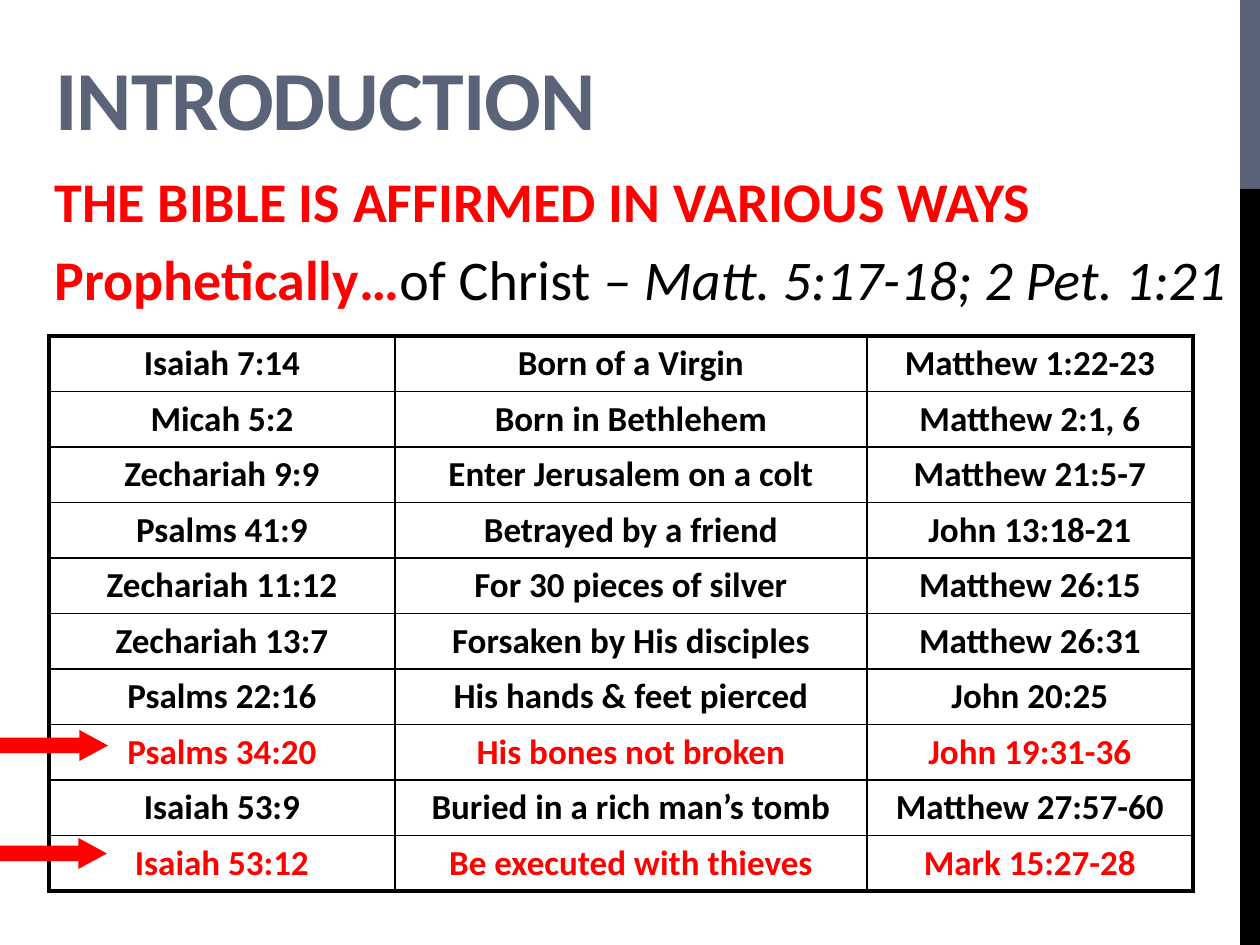
"""Build the Introduction slide on prophecies of Christ and their fulfilment."""
import dataclasses

import lxml.etree
import pptx
import pptx.dml.color
import pptx.enum.shapes
import pptx.enum.text
import pptx.oxml.ns
import pptx.util


@dataclasses.dataclass(frozen=True)
class Theme:
    font: str = "Calibri"
    slate: str = "5A6378"
    black: str = "000000"
    red: str = "FF0000"
    title_size: int = 48
    body_size: int = 32
    cell_size: int = 20
    outer_line: float = 2.25
    inner_line: float = 1


theme = Theme()
SCALE = 914400 / 126


def px(*lengths):
    return [pptx.util.Emu(round(length * SCALE)) for length in lengths]


def style(font, size, color, bold=True):
    font.name = theme.font
    font.size = pptx.util.Pt(size)
    font.bold = bold
    font.color.rgb = pptx.dml.color.RGBColor.from_string(color)


deck = pptx.Presentation()
deck.slide_width, deck.slide_height = px(1260, 945)
slide = deck.slides.add_slide(deck.slide_layouts[1])
shapes = slide.shapes

for top, height, color in [(0, 189, theme.slate), (189, 756, theme.black)]:
    rail = shapes.add_shape(pptx.enum.shapes.MSO_SHAPE.RECTANGLE, *px(1240, top, 20, height))
    rail.shadow.inherit = False
    rail.fill.solid()
    rail.fill.fore_color.rgb = pptx.dml.color.RGBColor.from_string(color)
    rail.line.fill.background()

heading = shapes.title
heading.left, heading.top, heading.width, heading.height = px(43, 38, 798, 116)
heading.text_frame.text = "INTRODUCTION"
heading.text_frame.auto_size = pptx.enum.text.MSO_AUTO_SIZE.NONE
heading.text_frame.vertical_anchor = pptx.enum.text.MSO_ANCHOR.BOTTOM
heading_line = heading.text_frame.paragraphs[0]
heading_line.alignment = pptx.enum.text.PP_ALIGN.LEFT
style(heading_line.font, theme.title_size, theme.slate)
heading_line.runs[0].font._element.set("spc", "-60")

claim = slide.placeholders[1]
claim.left, claim.top, claim.width, claim.height = px(42, 160, 1207, 785)
claim.text_frame.auto_size = pptx.enum.text.MSO_AUTO_SIZE.NONE
claim.text_frame.text = "THE BIBLE IS AFFIRMED IN VARIOUS WAYS"
affirmed = claim.text_frame.paragraphs[0]
style(affirmed.font, theme.body_size, theme.red)
prophetically = claim.text_frame.add_paragraph()
for text, color, bold, italic in [
    ("Prophetically…", theme.red, True, False),
    ("of Christ ", theme.black, False, False),
    ("– Matt. 5:17-18; 2 Pet. 1:21", theme.black, False, True),
]:
    phrase = prophetically.add_run()
    phrase.text = text
    style(phrase.font, theme.body_size, color, bold)
    phrase.font.italic = italic
for line in (affirmed, prophetically):
    line.space_before = pptx.util.Pt(6)
    properties = line._p.get_or_add_pPr()
    properties.set("marL", "0")
    properties.set("indent", "0")
    bullet_none = lxml.etree.Element(pptx.oxml.ns.qn("a:buNone"))
    properties.find(pptx.oxml.ns.qn("a:spcBef")).addnext(bullet_none)

prophecies = [
    ("Isaiah 7:14", "Born of a Virgin", "Matthew 1:22-23"),
    ("Micah 5:2", "Born in Bethlehem", "Matthew 2:1, 6"),
    ("Zechariah 9:9", "Enter Jerusalem on a colt", "Matthew 21:5-7"),
    ("Psalms 41:9", "Betrayed by a friend", "John 13:18-21"),
    ("Zechariah 11:12", "For 30 pieces of silver", "Matthew 26:15"),
    ("Zechariah 13:7", "Forsaken by His disciples", "Matthew 26:31"),
    ("Psalms 22:16", "His hands & feet pierced", "John 20:25"),
    ("Psalms 34:20", "His bones not broken", "John 19:31-36"),
    ("Isaiah 53:9", "Buried in a rich man’s tomb", "Matthew 27:57-60"),
    ("Isaiah 53:12", "Be executed with thieves", "Mark 15:27-28"),
]
highlighted = {"Psalms 34:20", "Isaiah 53:12"}
column_widths = px(346, 472, 326)
last_row, last_column = len(prophecies) - 1, len(column_widths) - 1
fulfilments = shapes.add_table(
    len(prophecies), len(column_widths), *px(49, 336, 1144, 55 * len(prophecies))
).table
fulfilments.first_row = fulfilments.horz_banding = False
for column, width in zip(fulfilments.columns, column_widths):
    column.width = width

for row, prophecy in enumerate(prophecies):
    color = theme.red if prophecy[0] in highlighted else theme.black
    for column, text in enumerate(prophecy):
        cell = fulfilments.cell(row, column)
        cell.text = text
        entry = cell.text_frame.paragraphs[0]
        entry.alignment = pptx.enum.text.PP_ALIGN.CENTER
        style(entry.font, theme.cell_size, color)
        cell_properties = cell._tc.get_or_add_tcPr()
        for side, is_outer in [
            ("lnL", column == 0),
            ("lnR", column == last_column),
            ("lnT", row == 0),
            ("lnB", row == last_row),
        ]:
            weight = theme.outer_line if is_outer else theme.inner_line
            border = lxml.etree.SubElement(
                cell_properties, pptx.oxml.ns.qn(f"a:{side}"), w=str(pptx.util.Pt(weight))
            )
            ink = lxml.etree.SubElement(border, pptx.oxml.ns.qn("a:solidFill"))
            lxml.etree.SubElement(ink, pptx.oxml.ns.qn("a:srgbClr"), val=theme.black)
        cell.fill.background()

for left, top in [(-8, 730), (-9, 838)]:
    pointer = shapes.add_shape(pptx.enum.shapes.MSO_SHAPE.RIGHT_ARROW, *px(left, top, 116, 31))
    pointer.adjustments[0], pointer.adjustments[1] = 0.5, 0.92
    pointer.shadow.inherit = False
    pointer.fill.solid()
    pointer.fill.fore_color.rgb = pptx.dml.color.RGBColor.from_string(theme.red)
    pointer.line.fill.background()

deck.save("out.pptx")
